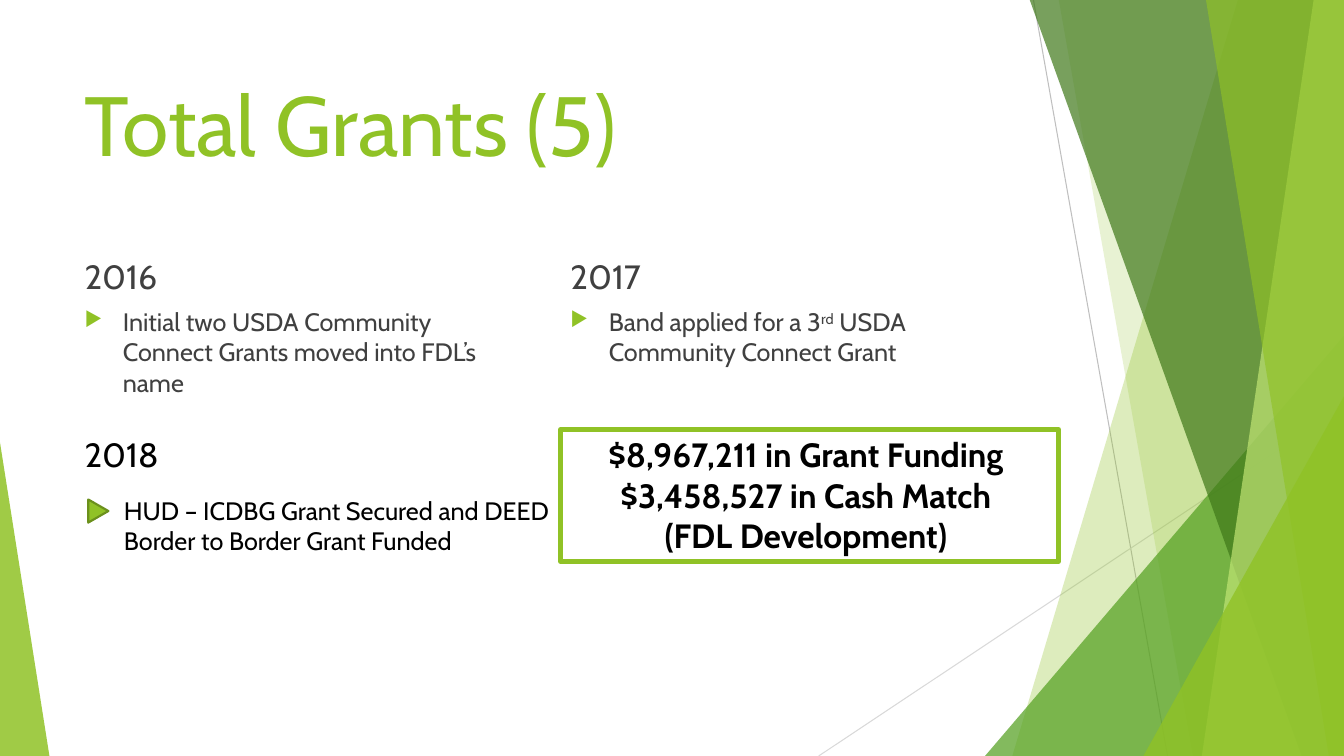
import lxml.etree
import pptx
import pptx.dml.color
import pptx.enum.shapes
import pptx.enum.text
import pptx.oxml.ns
import pptx.util

Inches = pptx.util.Inches
RGBColor = pptx.dml.color.RGBColor
Shapes = pptx.enum.shapes.MSO_SHAPE
Anchor = pptx.enum.text.MSO_ANCHOR
Align = pptx.enum.text.PP_ALIGN
qn = pptx.oxml.ns.qn

LIME = RGBColor(0x90, 0xC2, 0x26)
PALE_LIME = RGBColor(0xC0, 0xE4, 0x74)
GREEN = RGBColor(0x54, 0xA0, 0x21)
FOREST = RGBColor(0x3F, 0x78, 0x19)
OLIVE = RGBColor(0x6B, 0x90, 0x1C)
SILVER = RGBColor(0xBF, 0xBF, 0xBF)
LIGHT_GRAY = RGBColor(0xD9, 0xD9, 0xD9)
CHARCOAL = RGBColor(0x40, 0x40, 0x40)
BLACK = RGBColor(0, 0, 0)

WIDTH, HEIGHT = 13.33, 7.5
BAND_TOP = -0.01
LEFT, RIGHT = 0.74, 5.56
COLUMN = 4.58


def add_run(paragraph, text, size=18, color=CHARCOAL, bold=False, baseline=0, font="Cabin"):
    run = paragraph.add_run()
    run.text = text
    run.font.name = font
    run.font.size = pptx.util.Pt(size)
    run.font.bold = bold
    run.font.color.rgb = color
    if baseline:
        run.font._element.set("baseline", str(baseline * 1000))


class GrantSlide:
    """Draws the elements of the grants slide in one shared style."""

    def __init__(self, slide):
        self.slide = slide
        self.shapes = slide.shapes

    def line(self, start, end, color):
        points = [Inches(value) for value in (*start, *end)]
        connector = self.shapes.add_connector(
            pptx.enum.shapes.MSO_CONNECTOR.STRAIGHT, *points)
        connector.line.color.rgb = color
        connector.line.width = pptx.util.Pt(0.75)
        lxml.etree.SubElement(connector._element.spPr, qn("a:effectLst"))

    def paint(self, shape, color, opacity=100):
        shape.shadow.inherit = False
        shape.line.fill.background()
        shape.fill.solid()
        shape.fill.fore_color.rgb = color
        if opacity < 100:
            color_element = shape._element.spPr.find(f".//{qn('a:srgbClr')}")
            alpha = lxml.etree.SubElement(color_element, qn("a:alpha"))
            alpha.set("val", str(opacity * 1000))

    def band(self, top_left, bottom_left, color, opacity):
        corners = [(top_left, BAND_TOP), (WIDTH, BAND_TOP),
                   (WIDTH, HEIGHT), (bottom_left, HEIGHT)]
        points = [(Inches(x), Inches(y)) for x, y in corners]
        builder = self.shapes.build_freeform(*points[0])
        builder.add_line_segments(points[1:], close=True)
        self.paint(builder.convert_to_shape(), color, opacity)

    def triangle(self, left, top, width, height, color, opacity=100, apex=0.5):
        shape = self.shapes.add_shape(
            Shapes.ISOSCELES_TRIANGLE, *map(Inches, (left, top, width, height)))
        shape.adjustments[0] = apex
        self.paint(shape, color, opacity)
        return shape

    def arrow_bullet(self, left, top, width, height):
        shape = self.triangle(left, top, width, height, LIME)
        shape.rotation = 90
        shape.line.color.rgb = OLIVE
        shape.line.width = pptx.util.Pt(1.5)

    def text(self, left, top, width, height, *runs, anchor=Anchor.TOP, bullet=False, **style):
        box = self.shapes.add_textbox(*map(Inches, (left, top, width, height)))
        frame = box.text_frame
        frame.word_wrap = True
        frame.vertical_anchor = anchor
        paragraph = frame.paragraphs[0]
        if bullet:
            self.bullet(paragraph)
        for text, baseline in runs:
            add_run(paragraph, text, baseline=baseline, **style)

    def bullet(self, paragraph):
        properties = paragraph._p.get_or_add_pPr()
        properties.set("marL", str(Inches(0.38)))
        properties.set("indent", str(-Inches(0.38)))
        color = lxml.etree.SubElement(properties, qn("a:buClr"))
        lxml.etree.SubElement(color, qn("a:srgbClr")).set("val", str(LIME))
        lxml.etree.SubElement(properties, qn("a:buSzPct")).set("val", "80000")
        lxml.etree.SubElement(properties, qn("a:buChar")).set("char", "▶")

    def framed_box(self, left, top, width, height, lines):
        shape = self.shapes.add_shape(
            Shapes.RECTANGLE, *map(Inches, (left, top, width, height)))
        shape.shadow.inherit = False
        shape.fill.background()
        shape.line.color.rgb = LIME
        shape.line.width = pptx.util.Pt(3.25)
        frame = shape.text_frame
        frame.word_wrap = True
        frame.vertical_anchor = Anchor.TOP
        for index, text in enumerate(lines):
            paragraph = frame.add_paragraph() if index else frame.paragraphs[0]
            paragraph.alignment = Align.CENTER
            add_run(paragraph, text, size=24, color=BLACK, bold=True)


def draw_background(grants):
    grants.line((10.25, 0), (11.58, HEIGHT), SILVER)
    grants.line((WIDTH, 4.03), (8.12, HEIGHT), LIGHT_GRAY)
    grants.band(12.28, 10.04, LIME, 30)
    grants.band(10.5, 11.83, LIME, 20)
    grants.triangle(9.77, 3.33, 3.56, 4.17, GREEN, 72, apex=1)
    grants.band(10.21, 12.91, FOREST, 70)
    grants.band(13.03, 11.92, PALE_LIME, 70)
    grants.band(11.96, 13.18, LIME, 65)
    grants.triangle(11.34, 3.93, 1.99, 3.57, LIME, 80, apex=1)
    grants.triangle(0, 4.39, 0.49, 3.11, LIME, 85, apex=0)


def draw_content(grants):
    grants.text(LEFT, 0.67, 9.4, 1.44, ("Total Grants (5)", 0), size=60, color=LIME)
    years = [
        (LEFT, "2016", 1.27,
         [("Initial two USDA Community Connect Grants moved into FDL’s name", 0)]),
        (RIGHT, "2017", 3.61,
         [("Band applied for a 3", 0), ("rd", 30), (" USDA Community Connect Grant", 0)]),
    ]
    for left, year, height, runs in years:
        grants.text(left, 2.36, COLUMN, 0.63, (year, 0), size=24, anchor=Anchor.BOTTOM)
        grants.text(left, 2.99, COLUMN, height, *runs, bullet=True)
    grants.text(LEFT, 4.26, 1.15, 0.5, ("2018", 0), size=24, color=BLACK)
    grants.text(1.13, 4.86, COLUMN, 0.71,
                ("HUD – ICDBG Grant Secured and DEED Border to Border Grant Funded", 0),
                color=BLACK)
    grants.arrow_bullet(0.86, 4.97, 0.23, 0.2)
    grants.framed_box(RIGHT, 4.26, 4.94, 1.31, [
        "$8,967,211 in Grant Funding ",
        "$3,458,527 in Cash Match ",
        "(FDL Development) ",
    ])


def main():
    presentation = pptx.Presentation()
    presentation.slide_width = Inches(WIDTH)
    presentation.slide_height = Inches(HEIGHT)
    grants = GrantSlide(presentation.slides.add_slide(presentation.slide_layouts[6]))
    draw_background(grants)
    draw_content(grants)
    presentation.save("out.pptx")


if __name__ == "__main__":
    main()
